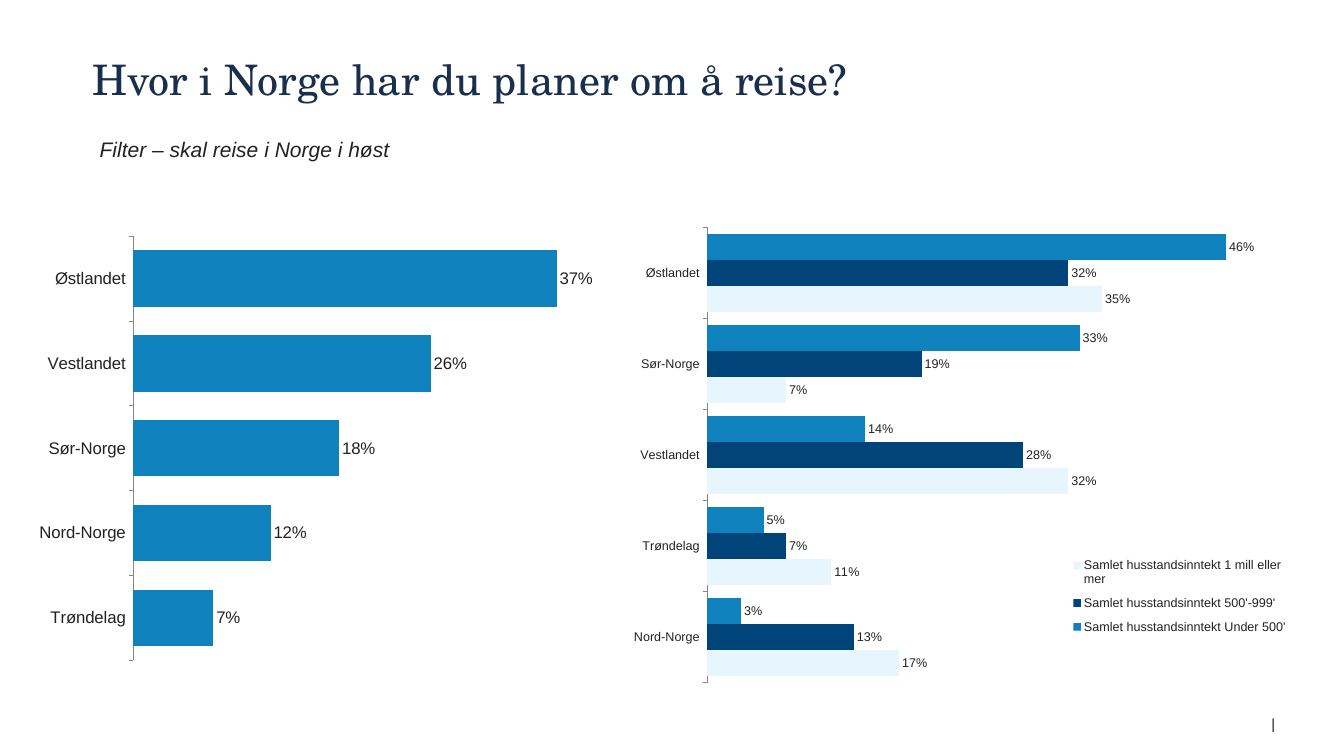
from dataclasses import dataclass
from typing import Optional

import lxml.etree
import pptx
import pptx.chart.data
import pptx.dml.color
import pptx.enum.chart
import pptx.enum.text
import pptx.oxml.ns
import pptx.util

Inches = pptx.util.Inches
ALIGN = pptx.enum.text.PP_ALIGN
ANCHOR = pptx.enum.text.MSO_ANCHOR


@dataclass(frozen=True)
class Theme:
    ink: str = "222222"
    navy: str = "182F4E"
    axis: str = "868686"
    blue: str = "0F81BC"
    dark_blue: str = "004479"
    pale_blue: str = "E7F6FC"
    body_font: str = "Arial"
    title_font: str = "TeX Gyre Schola"
    title_size: int = 40
    subtitle_size: int = 20
    footer_size: int = 14
    total_size: int = 16
    income_size: int = 12


@dataclass(frozen=True)
class Area:
    """Left, top, width and height: inches on the slide, shares inside a chart."""
    left: float
    top: float
    width: float
    height: float

    def inches(self) -> tuple:
        return tuple(Inches(n) for n in (self.left, self.top, self.width, self.height))


@dataclass(frozen=True)
class Series:
    name: str
    values: tuple
    color: str


@dataclass(frozen=True)
class BarChart:
    area: Area
    plot: Area
    regions: tuple
    series: tuple
    size: int
    maximum: float
    legend: Optional[Area] = None


THEME = Theme()

TOTAL = BarChart(
    area=Area(0.4, 3.01, 7.57, 5.84),
    plot=Area(0.18, 0.02, 0.8, 0.96),
    regions=("Østlandet", "Vestlandet", "Sør-Norge", "Nord-Norge", "Trøndelag"),
    series=(Series("Series 1", (0.37, 0.26, 0.18, 0.12, 0.07), THEME.blue),),
    size=THEME.total_size,
    maximum=0.4,
)

BY_INCOME = BarChart(
    area=Area(8.05, 2.88, 9.33, 6.34),
    plot=Area(0.14, 0.02, 0.8, 0.95),
    regions=("Østlandet", "Sør-Norge", "Vestlandet", "Trøndelag", "Nord-Norge"),
    series=(
        Series("Samlet husstandsinntekt Under 500'",
               (0.46, 0.33, 0.14, 0.05, 0.03), THEME.blue),
        Series("Samlet husstandsinntekt 500'-999'",
               (0.32, 0.19, 0.28, 0.07, 0.13), THEME.dark_blue),
        Series("Samlet husstandsinntekt 1 mill eller mer",
               (0.35, 0.07, 0.32, 0.11, 0.17), THEME.pale_blue),
    ),
    size=THEME.income_size,
    maximum=0.5,
    legend=Area(0.65, 0.69, 0.32, 0.2),
)


def rgb(color: str) -> pptx.dml.color.RGBColor:
    return pptx.dml.color.RGBColor.from_string(color)


def style_font(font, size: int, color: str = THEME.ink, name: str = THEME.body_font,
               italic: bool = False) -> None:
    font.size = pptx.util.Pt(size)
    font.name = name
    font.italic = italic
    font.color.rgb = rgb(color)


def write_text(box, text: str, *, size: int, color: str = THEME.ink,
               name: str = THEME.body_font, italic: bool = False,
               align=ALIGN.LEFT, anchor=ANCHOR.TOP, spacing: float = 1.0,
               insets: tuple = (0, 0, 0, 0)) -> None:
    frame = box.text_frame
    frame.word_wrap = True
    frame.auto_size = pptx.enum.text.MSO_AUTO_SIZE.NONE
    frame.vertical_anchor = anchor
    (frame.margin_left, frame.margin_top,
     frame.margin_right, frame.margin_bottom) = (Inches(n) for n in insets)
    para = frame.paragraphs[0]
    para.alignment = align
    para.line_spacing = spacing
    span = para.add_run()
    span.text = text
    style_font(span.font, size, color, name, italic)


def set_layout(parent, area: Area, index: int, target: Optional[str] = None) -> None:
    """Fix the place of a plot area or legend as shares of its chart."""
    tag = pptx.oxml.ns.qn
    for old in parent.findall(tag("c:layout")):
        parent.remove(old)
    layout = lxml.etree.Element(tag("c:layout"))
    manual = lxml.etree.SubElement(layout, tag("c:manualLayout"))
    entries = [("layoutTarget", target)] if target else []
    entries += [("xMode", "edge"), ("yMode", "edge"), ("x", area.left),
                ("y", area.top), ("w", area.width), ("h", area.height)]
    for key, value in entries:
        lxml.etree.SubElement(manual, tag(f"c:{key}")).set("val", str(value))
    parent.insert(index, layout)


def draw_chart(page, model: BarChart) -> None:
    data = pptx.chart.data.CategoryChartData(number_format="0%")
    data.categories = model.regions
    for series in model.series:
        data.add_series(series.name, series.values)
    chart = page.shapes.add_chart(pptx.enum.chart.XL_CHART_TYPE.BAR_CLUSTERED,
                                  *model.area.inches(), data).chart
    chart.has_title = False
    style_font(chart.font, model.size)
    set_layout(chart.plots[0]._element.getparent(), model.plot, 0, "inner")

    # Axes
    regions = chart.category_axis
    regions.reverse_order = True
    regions.has_major_gridlines = False
    regions.major_tick_mark = pptx.enum.chart.XL_TICK_MARK.OUTSIDE
    regions.format.line.color.rgb = rgb(THEME.axis)
    style_font(regions.tick_labels.font, model.size)
    shares = chart.value_axis
    shares.visible = False
    shares.has_major_gridlines = False
    shares.minimum_scale = 0
    shares.maximum_scale = model.maximum

    # Bars and their labels
    plot = chart.plots[0]
    plot.gap_width = 50
    plot.overlap = 0
    plot.vary_by_categories = False
    for bars, series in zip(plot.series, model.series):
        bars.format.fill.solid()
        bars.format.fill.fore_color.rgb = rgb(series.color)
        bars.invert_if_negative = False
        labels = bars.data_labels
        labels.show_value = True
        labels.number_format = "0%"
        labels.number_format_is_linked = False
        labels.position = pptx.enum.chart.XL_LABEL_POSITION.OUTSIDE_END
        style_font(labels.font, model.size)

    # Legend
    chart.has_legend = model.legend is not None
    if model.legend:
        legend = chart.legend
        legend.position = pptx.enum.chart.XL_LEGEND_POSITION.RIGHT
        legend.include_in_layout = False
        style_font(legend.font, model.size)
        set_layout(legend._element, model.legend, 1)


def main() -> None:
    deck = pptx.Presentation()
    deck.slide_width, deck.slide_height = Inches(17.78), Inches(10)
    page = deck.slides.add_slide(deck.slide_layouts[5])

    # Heading
    title = page.shapes.title
    title.left, title.top, title.width, title.height = Area(1.22, 0.38, 14.49, 1.93).inches()
    write_text(title, "Hvor i Norge har du planer om å reise?", size=THEME.title_size,
               color=THEME.navy, name=THEME.title_font, anchor=ANCHOR.MIDDLE,
               spacing=1.08, insets=(0, 0, 0, 0.66))
    subtitle = page.shapes.add_textbox(*Area(1.22, 1.75, 4.71, 0.44).inches())
    write_text(subtitle, "Filter – skal reise i Norge i høst", size=THEME.subtitle_size,
               italic=True, insets=(0.1, 0.05, 0.1, 0.05))

    # Charts
    for model in (TOTAL, BY_INCOME):
        draw_chart(page, model)

    # Footer mark
    footer = page.shapes.add_textbox(*Area(16.08, 9.46, 0.79, 0.24).inches())
    write_text(footer, "|", size=THEME.footer_size, align=ALIGN.RIGHT)

    deck.save("out.pptx")


if __name__ == "__main__":
    main()
